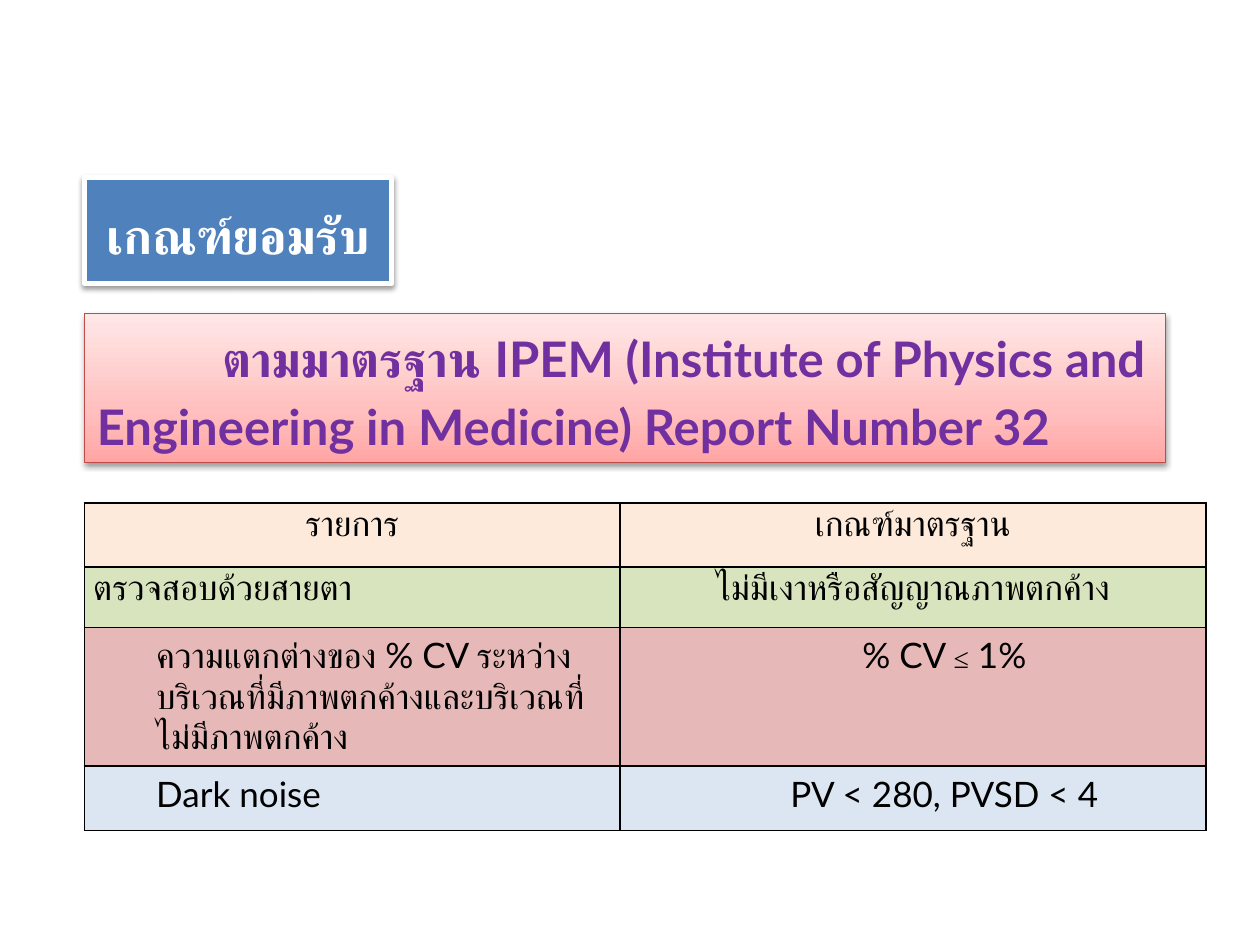
from lxml.etree import SubElement
from pptx import Presentation
from pptx.dml.color import RGBColor
from pptx.enum.shapes import MSO_SHAPE
from pptx.enum.text import MSO_ANCHOR, PP_ALIGN
from pptx.oxml import parse_xml
from pptx.oxml.ns import nsdecls, qn
from pptx.util import Inches, Pt

# Content: each text is a list of (words, style) runs
TITLE = [("เกณฑ์ยอมรับ", "title")]
STANDARD = [
    ("ตามมาตรฐาน ", "standard_thai"),
    ("IPEM (Institute of Physics and Engineering in Medicine) Report Number 32", "standard"),
]
# Rows: height, fill, then (runs, centred, left indent) for each cell
ROWS = [
    (0.51, "FDEADA", [([("รายการ", "thai")], True, 0),
                      ([("เกณฑ์มาตรฐาน", "thai")], True, 0)]),
    (0.48, "D7E4BD", [([("ตรวจสอบด้วยสายตา", "thai")], False, 0),
                      ([("ไม่มีเงาหรือสัญญาณภาพตกค้าง", "thai")], True, 0)]),
    (1.10, "E6B9B8", [([("ความแตกต่างของ ", "thai"), ("% CV", "latin"), (" ", "small"),
                        ("ระหว่างบริเวณที่มีภาพตกค้างและบริเวณที่ไม่มีภาพตกค้าง", "thai")], False, 0.5),
                      ([("% CV", "latin"), (" ", "small"), ("≤", "symbol"),
                        (" 1%", "latin")], True, 0.5)]),
    (0.51, "DCE6F2", [([("Dark noise", "latin")], False, 0.5),
                      ([("PV < 280, PVSD < 4", "latin")], True, 0.5)]),
]
COLUMN_WIDTHS = [4.25, 4.65]
LEFT = 0.67

THEME = {
    # style: font, size, colour, bold
    "styles": {
        "title": ("Lato", 28, "FFFFFF", True),
        "standard_thai": ("Calibri", 28, "7030A0", True),
        "standard": ("Lato", 28, "7030A0", True),
        "thai": ("Calibri", 20, "000000", False),
        "latin": ("Lato", 20, "000000", False),
        "small": ("Lato", 16, "000000", False),
        "symbol": ("Times New Roman", 16, "000000", False),
    },
    "title_fill": "4F81BD",
    "title_line": "FFFFFF",
    "standard_line": "BF4C48",
    "gradient": [(0, "FFA6A5"), (35, "FFC0BF"), (100, "FFE7E7")],
    "border": "000000",
    "line_spacing": 1.15,
}


def write_text(text_frame, runs, centred=False, left=0, first_line=0):
    paragraph = text_frame.paragraphs[0]
    paragraph.alignment = PP_ALIGN.CENTER if centred else PP_ALIGN.LEFT
    paragraph.line_spacing = THEME["line_spacing"]
    paragraph.space_before = Pt(0)
    properties = paragraph._p.get_or_add_pPr()
    properties.set("marL", str(Inches(left)))
    properties.set("indent", str(Inches(first_line)))
    for words, style in runs:
        name, size, colour, bold = THEME["styles"][style]
        run = paragraph.add_run()
        run.text = words
        run.font.name, run.font.size, run.font.bold = name, Pt(size), bold
        run.font.color.rgb = RGBColor.from_string(colour)


def set_line(shape, colour, width):
    shape.line.color.rgb = RGBColor.from_string(colour)
    shape.line.width = Pt(width)


def add_shadow(shape):
    shape._element.spPr.append(parse_xml(
        f'<a:effectLst {nsdecls("a")}><a:outerShdw blurRad="{Pt(3.1)}" dist="{Pt(1.6)}" '
        'dir="5400000" rotWithShape="0"><a:srgbClr val="000000"><a:alpha val="38000"/>'
        '</a:srgbClr></a:outerShdw></a:effectLst>'))


def fill_gradient(shape, stops):
    stop_xml = "".join(f'<a:gs pos="{position * 1000}"><a:srgbClr val="{colour}"/></a:gs>'
                       for position, colour in stops)
    shape._element.spPr.find(qn("a:prstGeom")).addnext(parse_xml(
        f'<a:gradFill {nsdecls("a")} rotWithShape="1"><a:gsLst>{stop_xml}</a:gsLst>'
        '<a:lin ang="16200000" scaled="0"/></a:gradFill>'))


def set_borders(cell):
    properties = cell._tc.get_or_add_tcPr()
    for side in ("lnL", "lnR", "lnT", "lnB"):
        border = SubElement(properties, qn(f"a:{side}"), w=str(Pt(1)))
        fill = SubElement(border, qn("a:solidFill"))
        SubElement(fill, qn("a:srgbClr"), val=THEME["border"])


presentation = Presentation()
presentation.slide_width, presentation.slide_height = Inches(10), Inches(7.5)
slide = presentation.slides.add_slide(presentation.slide_layouts[5])

# Title
title = slide.shapes.title
title.left, title.top = Inches(LEFT), Inches(1.41)
title.width, title.height = Inches(2.44), Inches(0.84)
title.fill.solid()
title.fill.fore_color.rgb = RGBColor.from_string(THEME["title_fill"])
set_line(title, THEME["title_line"], 3)
add_shadow(title)
title.text_frame.vertical_anchor = MSO_ANCHOR.MIDDLE
title.text_frame.word_wrap = True
write_text(title.text_frame, TITLE, centred=True)

# Standard
standard = slide.shapes.add_shape(MSO_SHAPE.RECTANGLE, Inches(LEFT), Inches(2.49),
                                  Inches(8.58), Inches(1.18))
fill_gradient(standard, THEME["gradient"])
set_line(standard, THEME["standard_line"], 0.75)
add_shadow(standard)
standard.text_frame.vertical_anchor = MSO_ANCHOR.TOP
standard.text_frame.word_wrap = True
write_text(standard.text_frame, STANDARD, first_line=1)

# Criteria table
table = slide.shapes.add_table(
    len(ROWS), len(COLUMN_WIDTHS), Inches(LEFT), Inches(3.99),
    Inches(sum(COLUMN_WIDTHS)), Inches(sum(row[0] for row in ROWS))).table
table.first_row = table.horz_banding = False
for column, width in zip(table.columns, COLUMN_WIDTHS):
    column.width = Inches(width)
for row, (height, fill, cells) in zip(table.rows, ROWS):
    row.height = Inches(height)
    for cell, (runs, centred, left) in zip(row.cells, cells):
        set_borders(cell)
        cell.fill.solid()
        cell.fill.fore_color.rgb = RGBColor.from_string(fill)
        cell.margin_left = cell.margin_right = Inches(0.07)
        cell.margin_top = cell.margin_bottom = 0
        write_text(cell.text_frame, runs, centred, left)

presentation.save("out.pptx")
